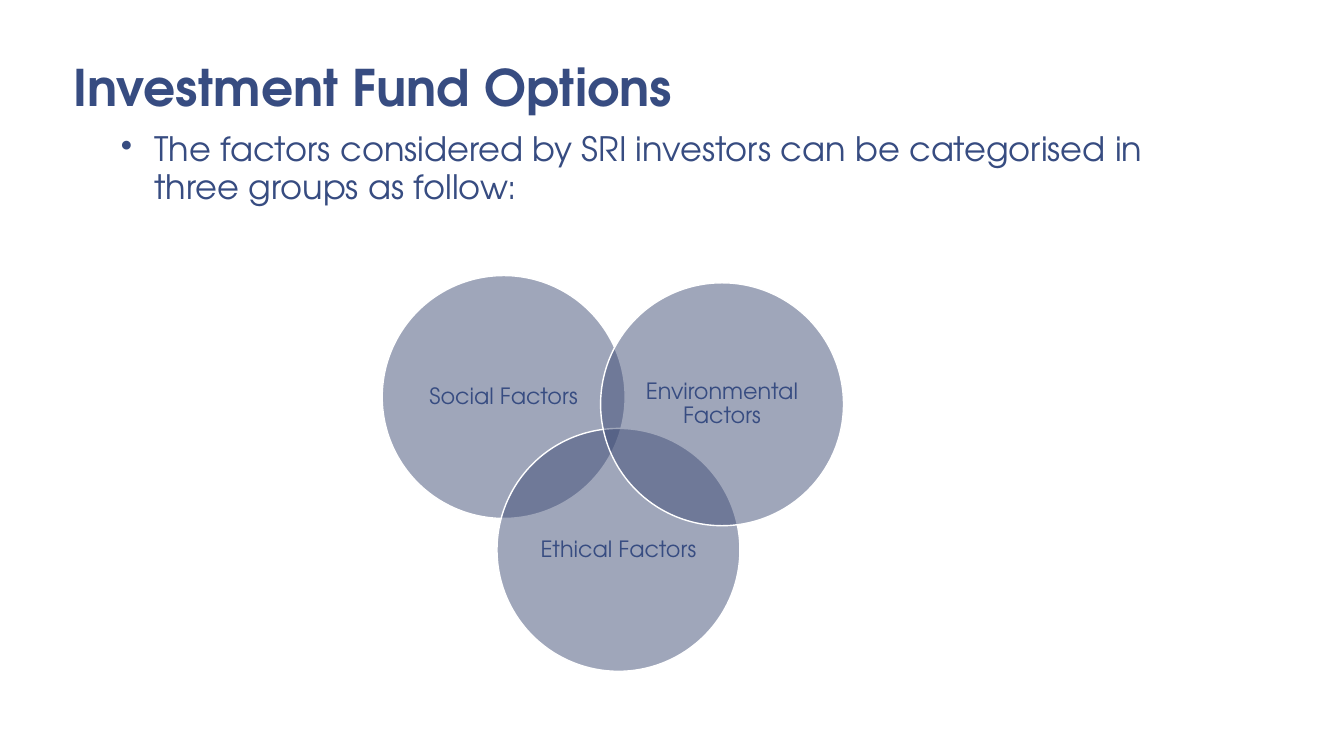
import pptx
import pptx.dml.color
import pptx.enum.shapes
import pptx.enum.text
import pptx.oxml.ns
import pptx.util
from lxml import etree

Pt = pptx.util.Pt
ALIGN = pptx.enum.text.PP_ALIGN
ANCHOR = pptx.enum.text.MSO_ANCHOR
NAVY = pptx.dml.color.RGBColor(0x37, 0x4C, 0x81)
SLATE = pptx.dml.color.RGBColor(0x41, 0x4E, 0x77)
WHITE = pptx.dml.color.RGBColor(0xFF, 0xFF, 0xFF)
FONT = "TeX Gyre Adventor"


def write_text(shape, text, size, bold=False, align=ALIGN.LEFT, anchor=ANCHOR.TOP,
               line_spacing=1.0, margins=(9.4, 5), bullet_indent=None):
    """Fill a shape with one paragraph; margins are (horizontal, vertical)."""
    frame = shape.text_frame
    frame.word_wrap = True
    frame.vertical_anchor = anchor
    frame.margin_left = frame.margin_right = Pt(margins[0])
    frame.margin_top = frame.margin_bottom = Pt(margins[1])
    paragraph = frame.paragraphs[0]
    paragraph.alignment = align
    paragraph.line_spacing = line_spacing
    if bullet_indent:
        properties = paragraph._p.get_or_add_pPr()
        properties.set("marL", str(Pt(bullet_indent)))
        properties.set("indent", str(-Pt(bullet_indent)))
        bullet = etree.SubElement(properties, pptx.oxml.ns.qn("a:buChar"))
        bullet.set("char", "•")
    run = paragraph.add_run()
    run.text = text
    run.font.name = FONT
    run.font.size = Pt(size)
    run.font.bold = bold
    run.font.color.rgb = NAVY


presentation = pptx.Presentation()
presentation.slide_width = Pt(960)
presentation.slide_height = Pt(540)
slide = presentation.slides.add_slide(presentation.slide_layouts[6])

title = slide.shapes.add_textbox(Pt(43.2), Pt(5.8), Pt(844.6), Pt(82.8))
write_text(title, "Investment Fund Options", size=36, bold=True,
           align=ALIGN.JUSTIFY, anchor=ANCHOR.BOTTOM, line_spacing=0.85)

body = slide.shapes.add_textbox(Pt(77), Pt(88.6), Pt(800), Pt(80))
write_text(body, "The factors considered by SRI investors can be categorised in "
           "three groups as follow:", size=24, line_spacing=0.95, bullet_indent=24)

# Three overlapping circles, back to front: label, left, top
DIAMETER = 173.5
circles = [
    ("Social Factors", 273, 196.8),
    ("Ethical Factors", 355, 306),
    ("Environmental Factors", 429, 202),
]
for label, left, top in circles:
    circle = slide.shapes.add_shape(pptx.enum.shapes.MSO_SHAPE.OVAL,
                                    Pt(left), Pt(top), Pt(DIAMETER), Pt(DIAMETER))
    circle.shadow.inherit = False
    circle.fill.solid()
    circle.fill.fore_color.rgb = SLATE
    color = circle.fill._xPr.find(".//" + pptx.oxml.ns.qn("a:srgbClr"))
    etree.SubElement(color, pptx.oxml.ns.qn("a:alpha")).set("val", "50000")
    circle.line.color.rgb = WHITE
    circle.line.width = Pt(1)
    write_text(circle, label, size=16, align=ALIGN.CENTER, anchor=ANCHOR.MIDDLE,
               line_spacing=0.9, margins=(5, 5))

presentation.save("out.pptx")
